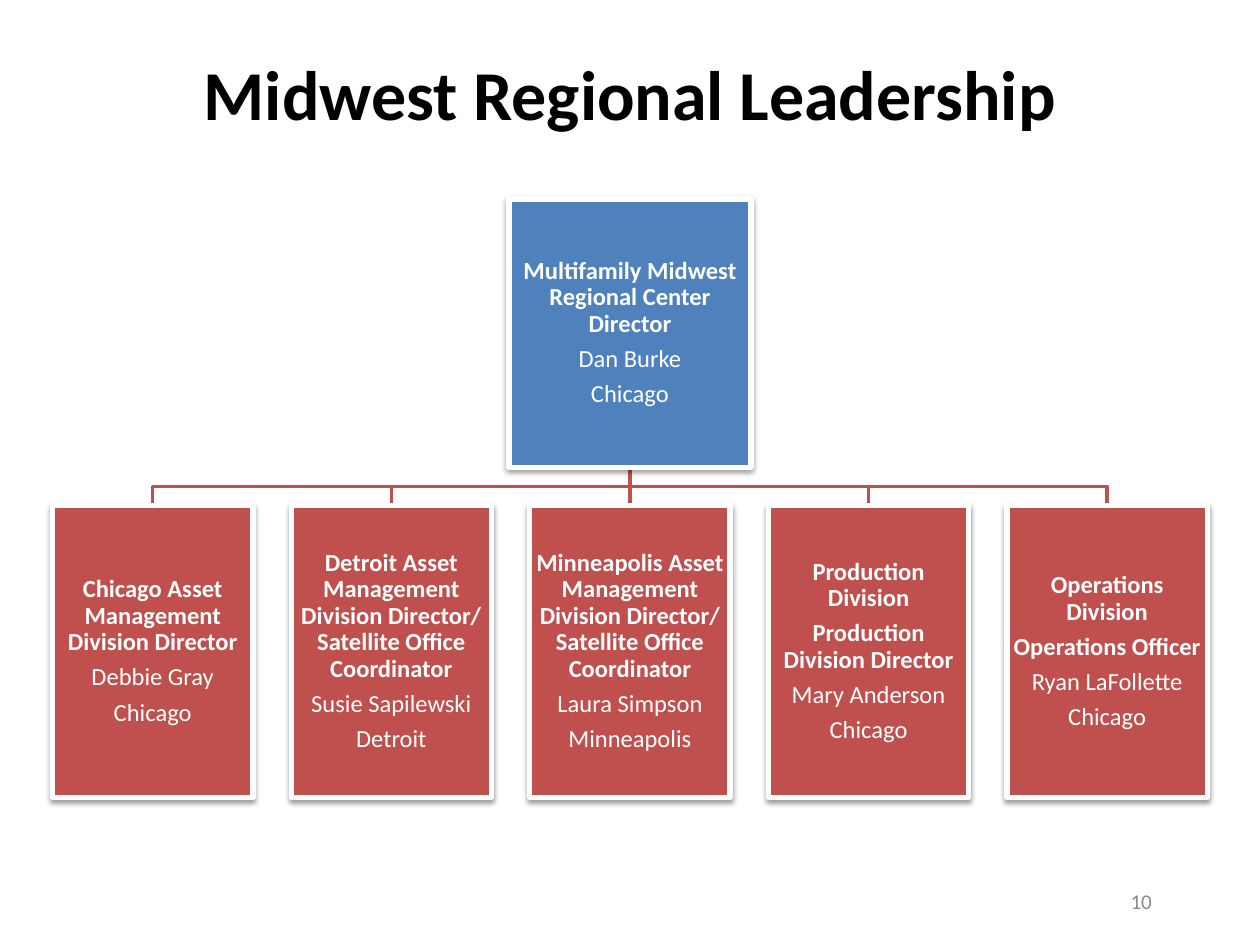
from dataclasses import dataclass

from lxml import etree
from pptx import Presentation, util as u
from pptx.dml.color import RGBColor
from pptx.enum import shapes, text
from pptx.oxml.ns import qn

FONT = "Calibri"
WHITE, BLUE, RED = "FFFFFF", "4F81BD", "C0504D"

ROOT = (["Multifamily Midwest Regional Center Director"], ["Dan Burke", "Chicago"])
DIVISIONS = [
    (["Chicago Asset Management Division Director"], ["Debbie Gray", "Chicago"]),
    (["Detroit Asset Management Division Director/ Satellite Office Coordinator"],
     ["Susie Sapilewski", "Detroit"]),
    (["Minneapolis Asset Management Division Director/ Satellite Office Coordinator"],
     ["Laura Simpson", "Minneapolis"]),
    (["Production Division", "Production Division Director"],
     ["Mary Anderson", "Chicago"]),
    (["Operations Division", "Operations Officer"], ["Ryan LaFollette", "Chicago"]),
]


@dataclass
class Box:
    """A region of the slide, in centimetres."""
    left: float
    top: float
    width: float
    height: float

    @property
    def middle(self):
        return self.left + self.width / 2

    @property
    def bottom(self):
        return self.top + self.height

    def lengths(self):
        return [u.Cm(n) for n in (self.left, self.top, self.width, self.height)]


def colour(value):
    return RGBColor.from_string(value)


def style_font(para, size, value, bold=False):
    para.font.name = FONT
    para.font.size = u.Pt(size)
    para.font.bold = bold
    para.font.color.rgb = colour(value)


def add_label(page, box, words, size, value, align, bold=False):
    frame = page.shapes.add_textbox(*box.lengths()).text_frame
    frame.word_wrap = True
    frame.vertical_anchor = text.MSO_ANCHOR.MIDDLE
    para = frame.paragraphs[0]
    para.text = words
    para.alignment = align
    style_font(para, size, value, bold)


def add_soft_shadow(shape):
    shape.shadow.inherit = False
    effects = shape._element.spPr.find(qn("a:effectLst"))
    shadow = etree.SubElement(
        effects, qn("a:outerShdw"), blurRad=str(u.Pt(3.1)), dist=str(u.Pt(1.6)),
        dir="5400000", rotWithShape="0")
    black = etree.SubElement(shadow, qn("a:srgbClr"), val="000000")
    etree.SubElement(black, qn("a:alpha"), val="38000")


def add_card(page, box, content, fill):
    """Draw a box with bold position lines above plain person and city lines."""
    card = page.shapes.add_shape(shapes.MSO_SHAPE.RECTANGLE, *box.lengths())
    card.fill.solid()
    card.fill.fore_color.rgb = colour(fill)
    card.line.color.rgb = colour(WHITE)
    card.line.width = u.Pt(3)
    add_soft_shadow(card)

    frame = card.text_frame
    frame.word_wrap = True
    frame.vertical_anchor = text.MSO_ANCHOR.MIDDLE
    frame.margin_left = frame.margin_right = u.Cm(0.02)
    frame.margin_top = frame.margin_bottom = u.Cm(0.02)
    positions, details = content
    for index, words in enumerate(positions + details):
        para = frame.paragraphs[0] if index == 0 else frame.add_paragraph()
        para.text = words
        para.alignment = text.PP_ALIGN.CENTER
        para.line_spacing = 0.9
        para.space_after = u.Pt(4.9)
        style_font(para, 14, WHITE, bold=index < len(positions))
    return card


def style_line(line):
    line.color.rgb = colour(RED)
    line.width = u.Pt(2)


def add_elbow(page, parent, child):
    turn = (parent.bottom + child.top) / 2
    points = [(parent.middle, parent.bottom), (parent.middle, turn),
              (child.middle, turn), (child.middle, child.top)]
    start, *rest = [(u.Cm(x), u.Cm(y)) for x, y in points]
    builder = page.shapes.build_freeform(*start)
    builder.add_line_segments(rest, close=False)
    elbow = builder.convert_to_shape()
    elbow.fill.background()
    elbow.shadow.inherit = False
    style_line(elbow.line)


def add_trunk(page, parent, child):
    trunk = page.shapes.add_connector(
        shapes.MSO_CONNECTOR.STRAIGHT, u.Cm(parent.middle), u.Cm(parent.bottom),
        u.Cm(child.middle), u.Cm(child.top))
    style_line(trunk.line)
    etree.SubElement(trunk._element.spPr, qn("a:effectLst"))
    return trunk


def add_org_chart(page, area):
    root_box = Box(area.middle - 2.44, area.top, 4.88, 5.41)
    width, height = 4.04, 5.89
    step = (area.width - width) / (len(DIVISIONS) - 1)
    boxes = [Box(area.left + i * step, area.bottom - height, width, height)
             for i in range(len(DIVISIONS))]
    centre = len(boxes) // 2

    # Lines go first so that the card borders cover their ends.
    for index, box in enumerate(boxes):
        if index != centre:
            add_elbow(page, root_box, box)
    trunk = add_trunk(page, root_box, boxes[centre])

    root = add_card(page, root_box, ROOT, BLUE)
    cards = [add_card(page, box, content, RED)
             for box, content in zip(boxes, DIVISIONS)]
    trunk.begin_connect(root, 2)
    trunk.end_connect(cards[centre], 0)


def main():
    deck = Presentation()
    deck.slide_width, deck.slide_height = u.Cm(25.4), u.Cm(19.05)
    page = deck.slides.add_slide(deck.slide_layouts[6])
    add_label(page, Box(1.27, 0.76, 22.86, 2.21), "Midwest Regional Leadership",
              40, "000000", text.PP_ALIGN.CENTER, bold=True)
    add_org_chart(page, Box(1.06, 4.01, 23.28, 12.07))
    add_label(page, Box(18.21, 17.65, 5.26, 1.02), "10",
              12, "898989", text.PP_ALIGN.RIGHT)
    deck.save("out.pptx")


if __name__ == "__main__":
    main()
